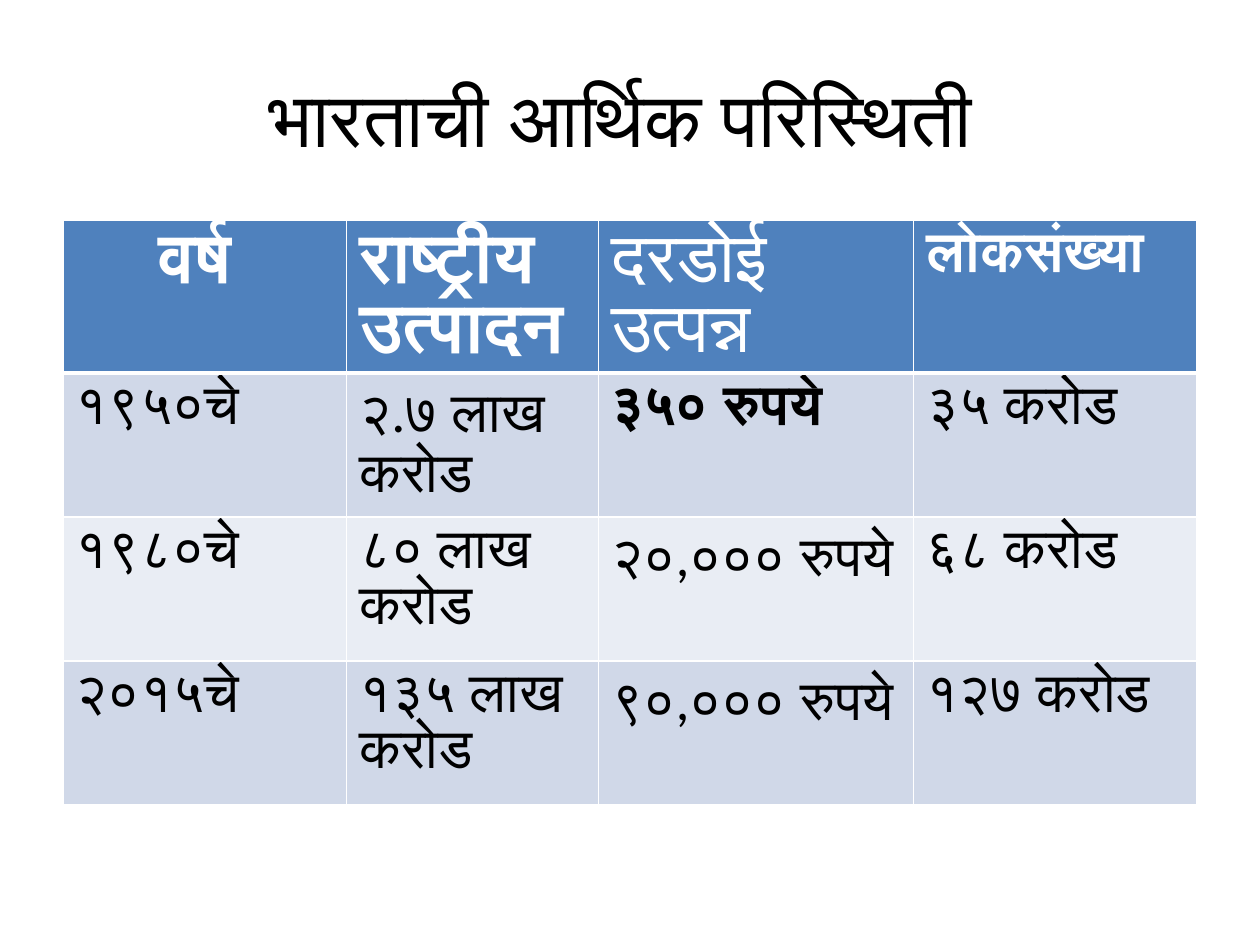
"""Build the slide on India's economic situation, with its table of three years."""
import dataclasses

import lxml.etree
import pptx
import pptx.dml.color
import pptx.enum.text
import pptx.oxml.ns
import pptx.table
import pptx.text.text
import pptx.util

Pt = pptx.util.Pt
RGBColor = pptx.dml.color.RGBColor
ALIGN = pptx.enum.text.PP_ALIGN

COLORS = {
    "text": "000000",
    "header_text": "FFFFFF",
    "header": "4F81BD",
    "odd_band": "D0D8E8",
    "even_band": "E9EDF4",
    "border": "FFFFFF",
}
COLUMN_WIDTHS = (162, 144, 180, 162)
ROW_HEIGHT = 82.3
THIN, THICK = 1, 3


@dataclasses.dataclass(frozen=True)
class Entry:
    text: str
    size: float = 32
    bold: bool = False
    color: str = "text"
    align: ALIGN = ALIGN.LEFT


def heading(text: str, size: float = 40, bold: bool = True, align: ALIGN = ALIGN.LEFT) -> Entry:
    return Entry(text, size, bold, "header_text", align)


TITLE = Entry("भारताची आर्थिक परिस्थिती ", size=44, align=ALIGN.CENTER)
ECONOMY = (
    (
        heading("वर्ष ", align=ALIGN.CENTER),
        heading("राष्ट्रीय उत्पादन"),
        heading("दरडोई उत्पन्न", bold=False),
        heading("लोकसंख्या", size=32),
    ),
    (Entry("१९५०चे"), Entry("२.७ लाख करोड"), Entry("३५० रुपये", bold=True), Entry("३५ करोड")),
    (Entry("१९८०चे"), Entry("८० लाख करोड"), Entry("२०,००० रुपये"), Entry("६८ करोड")),
    (Entry("२०१५चे"), Entry("१३५ लाख करोड"), Entry("९०,००० रुपये"), Entry("१२७ करोड")),
)


def write_entry(frame: pptx.text.text.TextFrame, entry: Entry) -> None:
    paragraph = frame.paragraphs[0]
    paragraph.alignment = entry.align
    run = paragraph.add_run()
    run.text = entry.text
    font_format = {"name": "Calibri", "size": Pt(entry.size), "bold": entry.bold}
    for attribute, value in font_format.items():
        setattr(run.font, attribute, value)
    run.font.color.rgb = RGBColor.from_string(COLORS[entry.color])


def add_borders(cell: pptx.table._Cell, widths: dict[str, float]) -> None:
    qn = pptx.oxml.ns.qn
    properties = cell._tc.get_or_add_tcPr()
    for side, width in widths.items():
        line = lxml.etree.SubElement(properties, qn(f"a:ln{side}"), w=str(Pt(width)))
        fill = lxml.etree.SubElement(line, qn("a:solidFill"))
        lxml.etree.SubElement(fill, qn("a:srgbClr"), val=COLORS["border"])


def fill_cell(cell: pptx.table._Cell, entry: Entry, row_number: int) -> None:
    top = THICK if row_number == 1 else THIN
    bottom = THICK if row_number == 0 else THIN
    add_borders(cell, {"L": THIN, "R": THIN, "T": top, "B": bottom})
    band = "header" if row_number == 0 else "odd_band" if row_number % 2 else "even_band"
    cell.fill.solid()
    cell.fill.fore_color.rgb = RGBColor.from_string(COLORS[band])
    write_entry(cell.text_frame, entry)


def main() -> None:
    presentation = pptx.Presentation()
    presentation.slide_width, presentation.slide_height = Pt(720), Pt(540)
    slide = presentation.slides.add_slide(presentation.slide_layouts[5])

    title = slide.shapes.title
    title_place = {"left": 36, "top": 21.6, "width": 648, "height": 90}
    for attribute, value in title_place.items():
        setattr(title, attribute, Pt(value))
    title.text_frame.vertical_anchor = pptx.enum.text.MSO_ANCHOR.MIDDLE
    write_entry(title.text_frame, TITLE)

    economy_table = slide.shapes.add_table(
        len(ECONOMY), len(COLUMN_WIDTHS), Pt(36), Pt(126),
        Pt(sum(COLUMN_WIDTHS)), Pt(ROW_HEIGHT * len(ECONOMY)),
    ).table
    for column, width in zip(economy_table.columns, COLUMN_WIDTHS):
        column.width = Pt(width)
    for row_number, (row, entries) in enumerate(zip(economy_table.rows, ECONOMY)):
        row.height = Pt(ROW_HEIGHT)
        for cell, entry in zip(row.cells, entries):
            fill_cell(cell, entry, row_number)

    presentation.save("out.pptx")


if __name__ == "__main__":
    main()
